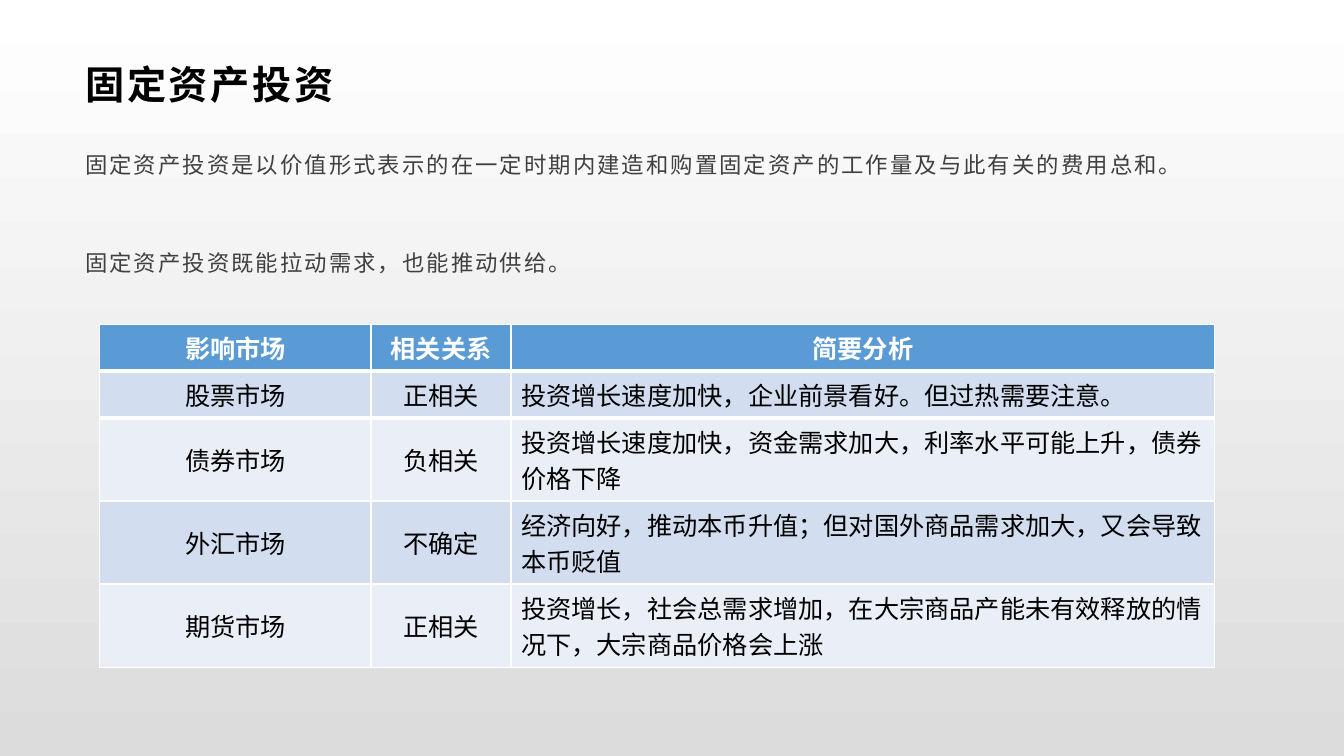
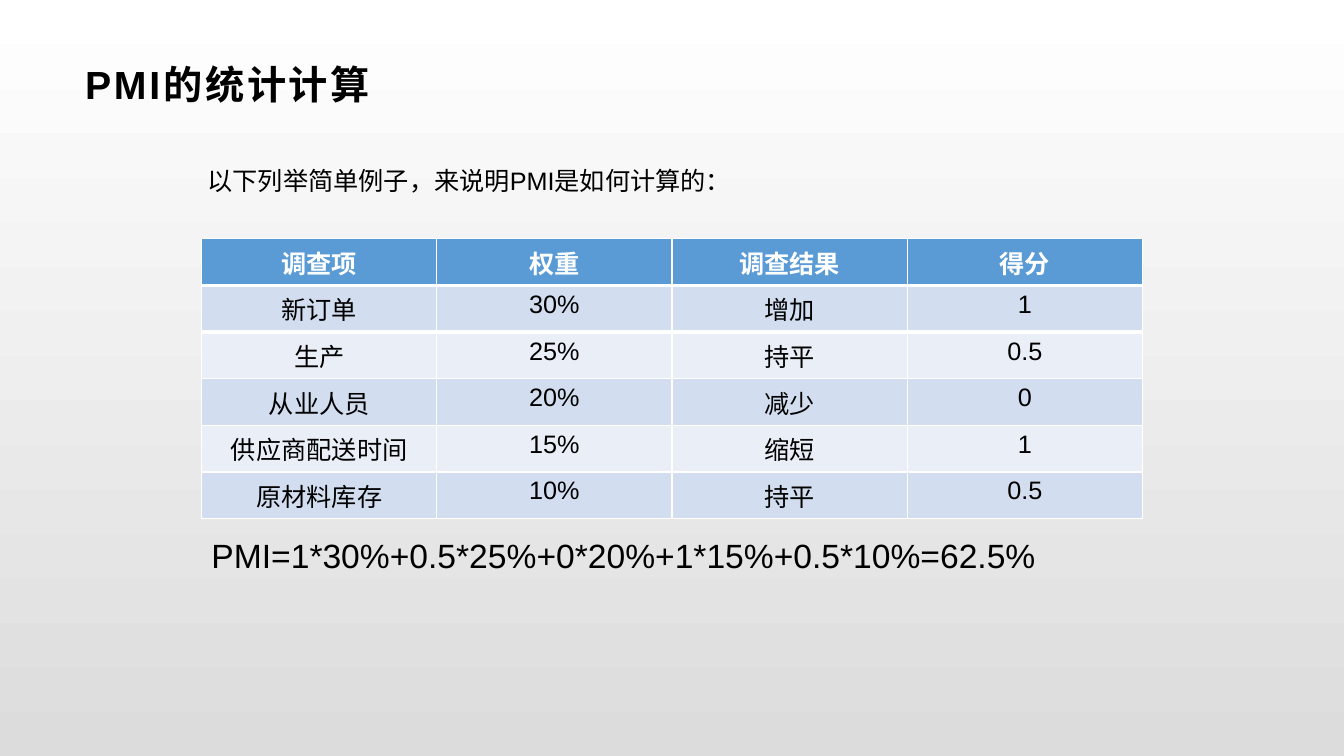
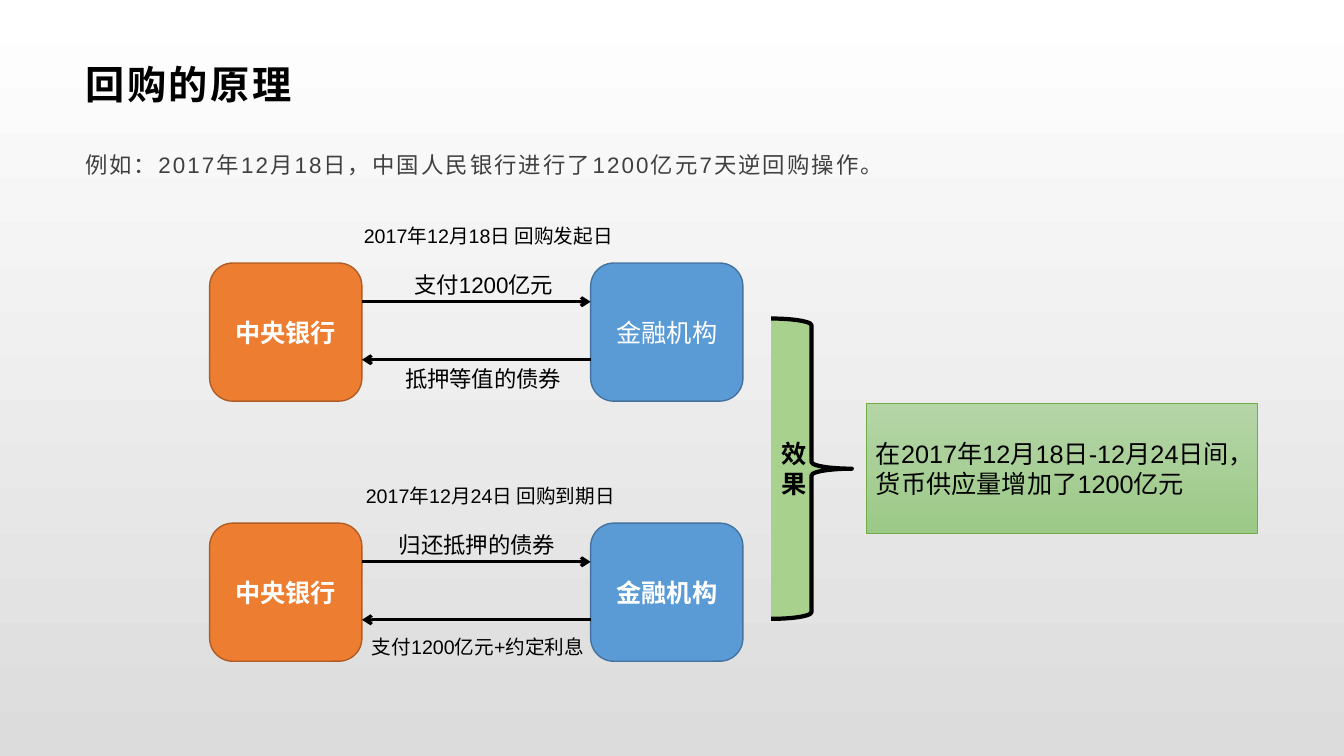
import dataclasses
import typing

import pptx
import pptx.dml.color
import pptx.enum.shapes
import pptx.enum.text
import pptx.oxml
import pptx.oxml.ns
import pptx.oxml.xmlchemy
import pptx.util

Pt = pptx.util.Pt
RGB = pptx.dml.color.RGBColor.from_string
SHAPE = pptx.enum.shapes.MSO_SHAPE
ALIGN = pptx.enum.text.PP_ALIGN
ANCHOR = pptx.enum.text.MSO_ANCHOR

SLIDE_W, SLIDE_H = pptx.util.Inches(13.33), pptx.util.Inches(7.5)
COL, ROW = SLIDE_W / 100, SLIDE_H / 100  # the slide is a 100 x 100 grid


@dataclasses.dataclass(frozen=True)
class Theme:
    font: str = "Arial"
    title: int = 28
    formula: int = 24
    text: int = 18
    body: int = 16
    small: int = 14
    black: str = "000000"
    white: str = "FFFFFF"
    grey: str = "404040"
    background: tuple = ("FFFFFF", "DCDCDC")
    header: str = "5B9BD5"
    bands: tuple = ("D2DEEF", "EAEFF7")
    bank: tuple = ("ED7D31", "AF5C24")
    institution: tuple = ("5B9BD5", "43739E")
    brace: str = "A9D18E"
    effect: tuple = ("B5D5A7", "9CC987")
    effect_line: str = "70AD47"


T = Theme()


class Box(typing.NamedTuple):
    """Left, top, width and height in grid columns and rows."""
    x: float
    y: float
    w: float
    h: float

    def emu(self):
        return (round(self.x * COL), round(self.y * ROW),
                round(self.w * COL), round(self.h * ROW))

    def inner(self, x, y, w, h):
        return Box(self.x + x, self.y + y, w, h)


class Label(typing.NamedTuple):
    """A caption placed relative to the flow it belongs to."""
    text: str
    x: float
    y: float
    w: float
    size: int


TITLE_BOX = Box(5.5, 6.35, 89, 9.47)
BODY_BOX = Box(5.5, 18.93, 89, 73.5)


def style(p, size, color=T.black, bold=False, align=ALIGN.LEFT, spacing=0):
    p.alignment = align
    p.font.name, p.font.size, p.font.bold = T.font, Pt(size), bold
    p.font.color.rgb = RGB(color)
    if spacing:
        for r in p.runs:
            r._r.get_or_add_rPr().set("spc", str(round(spacing * 100)))


def gradient(fill, colors):
    """Blend two colours from top to bottom."""
    fill.gradient()
    fill.gradient_angle = 270
    for stop, color in zip(fill.gradient_stops, colors):
        stop.color.rgb = RGB(color)


def new_slide(prs, title):
    slide = prs.slides.add_slide(prs.slide_layouts[5])
    sp = slide.shapes.title
    sp.left, sp.top, sp.width, sp.height = TITLE_BOX.emu()
    tf = sp.text_frame
    tf.text = title
    tf.auto_size = pptx.enum.text.MSO_AUTO_SIZE.NONE
    tf.vertical_anchor = ANCHOR.MIDDLE
    tf.margin_left, tf.margin_right = Pt(8), Pt(6)
    tf.margin_top = tf.margin_bottom = Pt(3)
    style(tf.paragraphs[0], T.title, bold=True, spacing=2)
    return slide


def add_text(slide, box, text, size):
    tf = slide.shapes.add_textbox(*box.emu()).text_frame
    tf.word_wrap = True
    tf.text = text
    style(tf.paragraphs[0], size)


def add_body(slide, lines, gap=10):
    tf = slide.shapes.add_textbox(*BODY_BOX.emu()).text_frame
    tf.word_wrap = True
    tf.margin_left, tf.margin_right = Pt(8), Pt(6.5)
    tf.margin_top = tf.margin_bottom = 0
    tf.text = "\n".join(lines)
    for p in tf.paragraphs:
        p.line_spacing, p.space_after = 1.3, Pt(gap)
        style(p, T.body, T.grey, spacing=1.5)


def add_shape(slide, kind, box, text, line, line_width, **font):
    sp = slide.shapes.add_shape(kind, *box.emu())
    sp.shadow.inherit = False
    sp.line.color.rgb, sp.line.width = RGB(line), Pt(line_width)
    tf = sp.text_frame
    tf.word_wrap = True
    tf.vertical_anchor = ANCHOR.MIDDLE
    tf.text = text
    style(tf.paragraphs[0], T.text, **font)
    return sp


def solid(sp, color):
    sp.fill.solid()
    sp.fill.fore_color.rgb = RGB(color)


def add_arrow(slide, x1, x2, y):
    y = round(y * ROW)
    cn = slide.shapes.add_connector(pptx.enum.shapes.MSO_CONNECTOR.STRAIGHT,
                                    round(x1 * COL), y, round(x2 * COL), y)
    cn.line.color.rgb, cn.line.width = RGB(T.black), Pt(2.25)
    make = pptx.oxml.xmlchemy.OxmlElement
    tail = make("a:tailEnd")
    tail.set("type", "arrow")
    cn.line._get_or_add_ln().append(tail)
    cn._element.spPr.append(make("a:effectLst"))


def add_border(cell, side, width):
    """Draw a white border; side is lnL, lnR, lnT or lnB."""
    cell._tc.get_or_add_tcPr().insert(0, pptx.oxml.parse_xml(
        f'<a:{side} {pptx.oxml.ns.nsdecls("a")} w="{Pt(width)}"><a:solidFill>'
        f'<a:srgbClr val="{T.white}"/></a:solidFill></a:{side}>'))


def add_table(slide, box, rows, widths, heights, aligns, anchor):
    """Draw a banded table; widths are relative, heights are grid rows."""
    table = slide.shapes.add_table(len(rows), len(widths), *box.emu()).table
    for column, width in zip(table.columns, widths):
        column.width = round(box.w * COL * width / sum(widths))
    for i, (values, height) in enumerate(zip(rows, heights)):
        table.rows[i].height = round(height * ROW)
        head = i == 0
        for j, value in enumerate(values):
            cell = table.cell(i, j)
            cell.text = value
            cell.vertical_anchor = ANCHOR.TOP if head else anchor
            solid(cell, T.header if head else T.bands[(i - 1) % 2])
            style(cell.text_frame.paragraphs[0], T.text,
                  T.white if head else T.black, head,
                  ALIGN.CENTER if head else aligns[j])
            if i < 2:
                add_border(cell, "lnB" if head else "lnT", 3)


def add_flow(slide, box, labels, institution_bold):
    """Two parties exchanging funds and bonds, with captions."""
    node_w = 11.33
    right = box.w - node_w
    for x, text, (fill, line), bold in (
            (0, "中央银行", T.bank, True),
            (right, "金融机构", T.institution, institution_bold)):
        sp = add_shape(slide, SHAPE.ROUNDED_RECTANGLE,
                       box.inner(x, 0, node_w, box.h), text, line, 1,
                       color=T.white, bold=bold, align=ALIGN.CENTER)
        solid(sp, fill)
    start, end = box.x + node_w, box.x + right
    add_arrow(slide, start, end, box.y + box.h * 0.28)
    add_arrow(slide, end, start, box.y + box.h * 0.7)
    for label in labels:
        add_text(slide, box.inner(label.x, label.y, label.w, 4.93),
                 label.text, label.size)


def investment_slide(prs):
    slide = new_slide(prs, "固定资产投资")
    add_body(slide, [
        "固定资产投资是以价值形式表示的在一定时期内建造和购置固定资产的工作量及与此有关的费用总和。",
        "固定资产投资既能拉动需求，也能推动供给。"], gap=45)
    rows = [
        ("影响市场", "相关关系", "简要分析"),
        ("股票市场", "正相关", "投资增长速度加快，企业前景看好。但过热需要注意。"),
        ("债券市场", "负相关", "投资增长速度加快，资金需求加大，利率水平可能上升，债券价格下降"),
        ("外汇市场", "不确定", "经济向好，推动本币升值；但对国外商品需求加大，又会导致本币贬值"),
        ("期货市场", "正相关",
         "投资增长，社会总需求增加，在大宗商品产能未有效释放的情况下，大宗商品价格会上涨"),
    ]
    heights = [6.17] * 2 + [11] * 3
    add_table(slide, Box(7.43, 42.93, 82.95, sum(heights)), rows,
              (2.69, 1.39, 6.98), heights,
              (ALIGN.CENTER, ALIGN.CENTER, ALIGN.LEFT), ANCHOR.MIDDLE)


def pmi_slide(prs):
    slide = new_slide(prs, "PMI的统计计算")
    rows = [
        ("调查项", "权重", "调查结果", "得分"),
        ("新订单", "30%", "增加", "1"),
        ("生产", "25%", "持平", "0.5"),
        ("从业人员", "20%", "减少", "0"),
        ("供应商配送时间", "15%", "缩短", "1"),
        ("原材料库存", "10%", "持平", "0.5"),
    ]
    heights = [6.17] * len(rows)
    add_table(slide, Box(15, 31.6, 70, sum(heights)), rows, [1] * 4,
              heights, [ALIGN.CENTER] * 4, ANCHOR.TOP)
    add_text(slide, Box(14.7, 21.2, 67.9, 5.33),
             "以下列举简单例子，来说明PMI是如何计算的：", T.text)
    add_text(slide, Box(15, 70.13, 67.9, 6.67),
             "PMI=1*30%+0.5*25%+0*20%+1*15%+0.5*10%=62.5%", T.formula)


def repo_slide(prs):
    slide = new_slide(prs, "回购的原理")
    add_body(slide, ["例如：2017年12月18日，中国人民银行进行了1200亿元7天逆回购操作。"])
    start_labels = (
        Label("2017年12月18日 回购发起日", 10.73, -5.87, 32, T.small),
        Label("支付1200亿元", 14.48, 0.4, 14.55, T.body),
        Label("抵押等值的债券", 13.8, 12.8, 14.55, T.body))
    end_labels = (
        Label("2017年12月24日 回购到期日", 10.88, -5.87, 32, T.small),
        Label("归还抵押的债券", 13.35, 0.4, 14.55, T.body),
        Label("支付1200亿元+约定利息", 11.33, 14.13, 18.08, T.small))
    for top, labels, bold in ((34.8, start_labels, False),
                              (69.2, end_labels, True)):
        add_flow(slide, Box(15.6, top, 39.68, 18.27), labels, bold)
    brace = add_shape(slide, SHAPE.RIGHT_BRACE, Box(57.38, 42.13, 6, 39.73),
                      "效果", T.black, 3, bold=True, align=ALIGN.CENTER)
    solid(brace, T.brace)
    effect = add_shape(slide, SHAPE.RECTANGLE, Box(64.43, 53.33, 29.1, 17.2),
                       "在2017年12月18日-12月24日间，货币供应量增加了1200亿元",
                       T.effect_line, 0.5)
    gradient(effect.fill, T.effect)


def main():
    prs = pptx.Presentation()
    prs.slide_width, prs.slide_height = SLIDE_W, SLIDE_H
    gradient(prs.slide_master.background.fill, T.background)
    for build in (investment_slide, pmi_slide, repo_slide):
        build(prs)
    prs.save("out.pptx")


if __name__ == "__main__":
    main()
